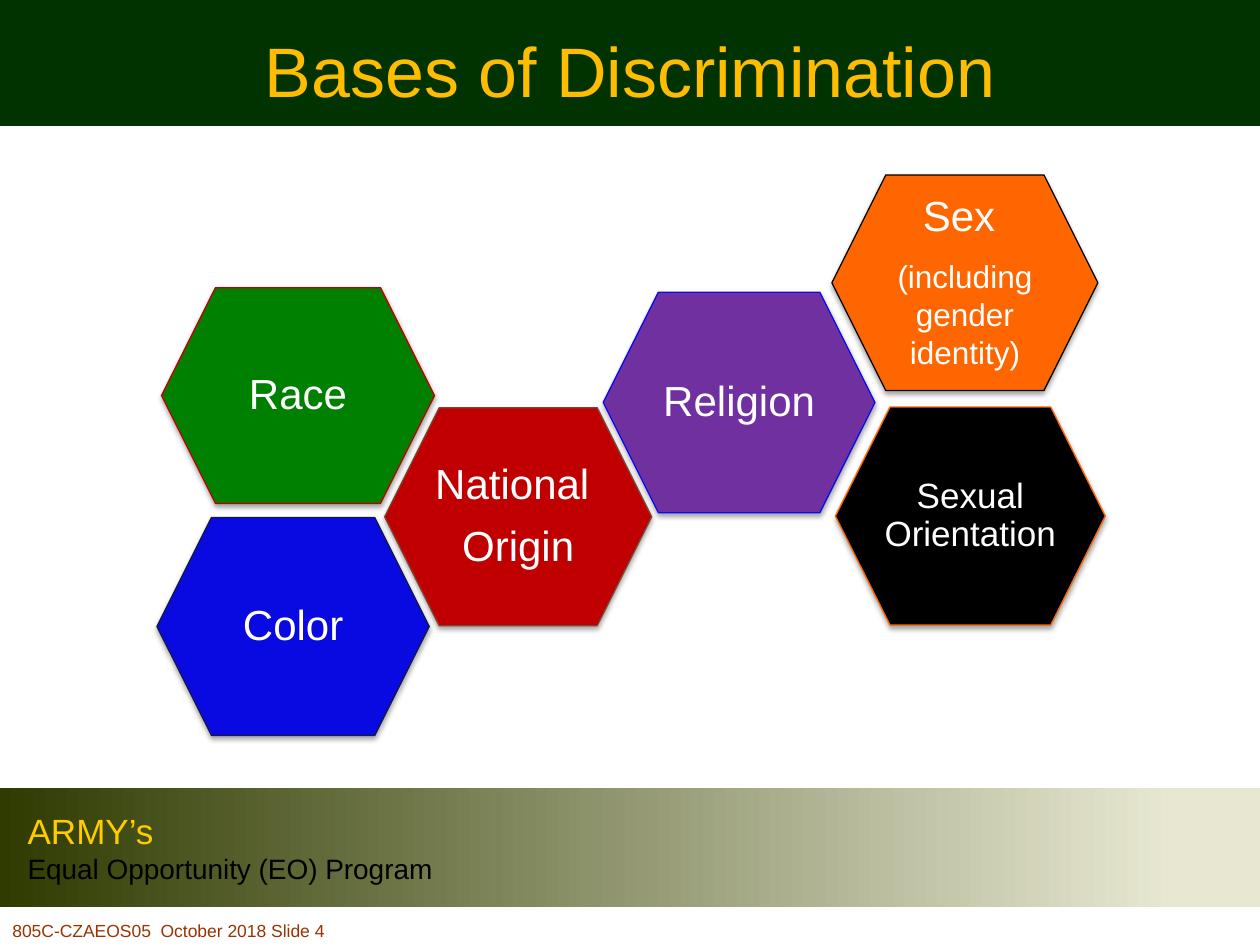
import pptx
import pptx.util
import pptx.dml.color
import pptx.enum.shapes
import pptx.enum.text
import pptx.oxml
import pptx.oxml.ns

Pt = pptx.util.Pt
SHAPE = pptx.enum.shapes.MSO_SHAPE
ALIGN = pptx.enum.text.PP_ALIGN
ANCHOR = pptx.enum.text.MSO_ANCHOR

COLORS = {
    "forest": "003300", "olive": "2F3B01", "cream": "E8E8D2",
    "gold": "FFBC01", "yellow": "FFCC00", "rust": "993300",
    "white": "FFFFFF", "black": "000000", "blue": "0909E1",
    "navy": "171745", "purple": "7030A0", "violet": "0A0AF0",
    "green": "008000", "red": "C00000", "brown": "7D4333",
    "orange": "FF6600",
}

SHADOW = (
    '<a:effectLst xmlns:a="http://schemas.openxmlformats.org/drawingml/2006/main">'
    '<a:outerShdw blurRad="{blur}" dist="{dist}" dir="5400000" rotWithShape="0">'
    '<a:srgbClr val="{color}"><a:alpha val="35000"/></a:srgbClr>'
    "</a:outerShdw></a:effectLst>"
)


class Deck:
    font = "Arial"

    def __init__(self, width, height):
        self.prs = pptx.Presentation()
        self.prs.slide_width, self.prs.slide_height = Pt(width), Pt(height)
        self.s = self.prs.slides.add_slide(self.prs.slide_layouts[5])

    def color(self, name):
        return pptx.dml.color.RGBColor.from_string(COLORS[name])

    def shape(self, kind, box, fill=None, line=None):
        sp = self.s.shapes.add_shape(kind, *map(Pt, box))
        sp.shadow.inherit = False
        if fill:
            sp.fill.solid()
            sp.fill.fore_color.rgb = self.color(fill)
        if line:
            sp.line.color.rgb = self.color(line)
            sp.line.width = Pt(0.75)
        else:
            sp.line.fill.background()
        return sp

    def fill_text(self, sp, lines, para=None, **frame):
        tf = sp.text_frame
        for name, value in {"word_wrap": True, **frame}.items():
            setattr(tf, name, value)
        for i, (text, size, color, *extra) in enumerate(lines):
            p = tf.paragraphs[0] if i == 0 else tf.add_paragraph()
            own = extra[0] if extra else {}
            for name, value in {**(para or {}), **own}.items():
                setattr(p, name, value)
            r = p.add_run()
            r.text = text
            for name, value in {"name": self.font, "size": Pt(size)}.items():
                setattr(r.font, name, value)
            r.font.color.rgb = self.color(color)

    def title(self, box, text):
        sp = self.s.shapes.title
        sp.left, sp.top, sp.width, sp.height = map(Pt, box)
        self.s.shapes.element.append(sp.element)
        self.fill_text(sp, [(text, 40, "gold")], {"alignment": ALIGN.CENTER},
                       vertical_anchor=ANCHOR.MIDDLE)

    def banner(self, box, start, end, lines):
        sp = self.shape(SHAPE.RECTANGLE, box)
        sp.fill.gradient()
        sp.fill.gradient_angle = 0
        for stop, position, name in zip(sp.fill.gradient_stops, (0, 0.93), (start, end)):
            stop.position = position
            stop.color.rgb = self.color(name)
        self.fill_text(sp, lines, {"alignment": ALIGN.LEFT},
                       vertical_anchor=ANCHOR.MIDDLE, margin_left=Pt(15.8))

    def hexagon(self, box, fill, line, lines):
        sp = self.shape(SHAPE.HEXAGON, box, fill, line)
        props = sp.element.spPr
        props.remove(props.find(pptx.oxml.ns.qn("a:effectLst")))
        props.append(pptx.oxml.parse_xml(SHADOW.format(
            blur=Pt(3.1), dist=Pt(1.8), color=COLORS["black"])))
        para = {"alignment": ALIGN.CENTER, "line_spacing": 0.9, "space_after": Pt(9.5)}
        self.fill_text(sp, lines, para, vertical_anchor=ANCHOR.MIDDLE,
                       margin_left=0, margin_right=0, margin_top=Pt(2), margin_bottom=Pt(2))

    def text(self, box, lines):
        self.fill_text(self.s.shapes.add_textbox(*map(Pt, box)), lines)


def main():
    deck = Deck(720, 540)
    deck.shape(SHAPE.RECTANGLE, (0, 0, 720, 72), "forest")
    deck.banner((0, 450, 720, 68.5), "olive", "cream", [
        ("ARMY’s", 20, "yellow"),
        ("Equal Opportunity (EO) Program", 16, "black"),
    ])
    deck.title((49.7, 0.7, 620.6, 78.5), "Bases of Discrimination")

    hexagons = [
        ((89.7, 295.7, 155.6, 124.6), "blue", "navy", [("Color", 24)]),
        ((344.7, 167, 155.3, 126), "purple", "violet", [("Religion", 24)]),
        ((92.3, 164.4, 156, 123.3), "green", "red", [("Race", 24)]),
        ((219.8, 233, 152.6, 124.6), "red", "brown", [("National ", 24), ("Origin", 24)]),
        ((475.4, 100, 152, 123.2), "orange", "black",
         [("Sex ", 24), ("(including gender identity)", 18, {"line_spacing": 1.0})]),
        ((477.4, 232.6, 154.2, 124.6), "black", "orange", [("Sexual Orientation", 20)]),
    ]
    for box, fill, line, lines in hexagons:
        deck.hexagon(box, fill, line,
                     [(text, size, "white", *extra) for text, size, *extra in lines])

    deck.text((0, 522, 280.8, 18), [("805C-CZAEOS05  October 2018 Slide 4", 10, "rust")])
    deck.prs.save("out.pptx")


if __name__ == "__main__":
    main()
